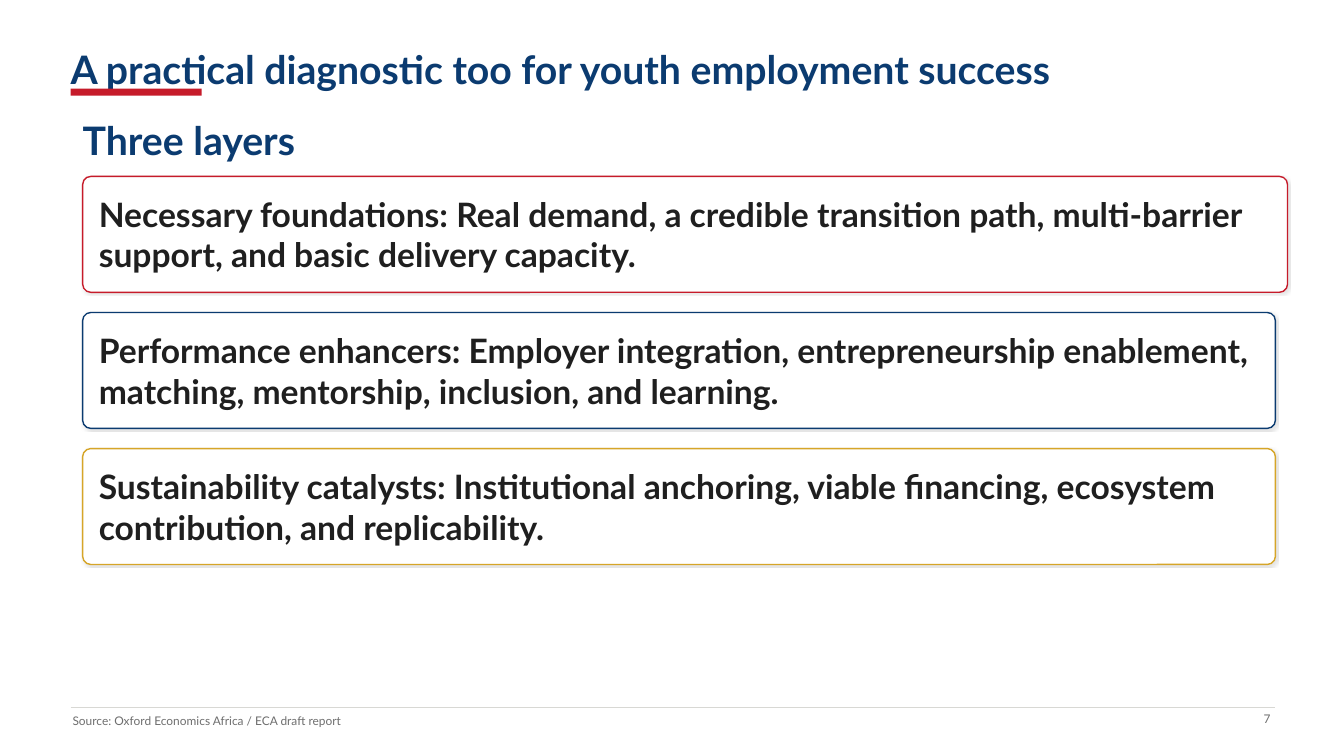
from pptx import Presentation
from pptx.dml.color import RGBColor
from pptx.enum.shapes import MSO_CONNECTOR, MSO_SHAPE
from pptx.enum.text import MSO_ANCHOR, PP_ALIGN
from pptx.oxml import parse_xml
from pptx.oxml.ns import nsdecls, qn
from pptx.util import Pt

EMU_PER_PX = 9144
RECTANGLE = MSO_SHAPE.RECTANGLE
ROUNDED = MSO_SHAPE.ROUNDED_RECTANGLE
STRAIGHT = MSO_CONNECTOR.STRAIGHT
MIDDLE = MSO_ANCHOR.MIDDLE
LEFT = PP_ALIGN.LEFT
RIGHT = PP_ALIGN.RIGHT

COLOURS = {
    "navy": "0B3B70",
    "red": "C61B2A",
    "gold": "D6A528",
    "ink": "1F1F1F",
    "grey": "6E6E6E",
    "rule": "D8D8D4",
    "white": "FFFFFF",
}

STYLES = {
    "heading": {"size": 28, "bold": True, "colour": "navy"},
    "layer": {"size": 24, "bold": True, "colour": "ink"},
    "footer": {"size": 8.5, "bold": False, "colour": "grey"},
}

LAYERS = [
    ("red", 1195, 1162,
     "Necessary foundations: Real demand, a credible transition path, "
     "multi-barrier support, and basic delivery capacity."),
    ("navy", 1183, 1142,
     "Performance enhancers: Employer integration, entrepreneurship enablement, "
     "matching, mentorship, inclusion, and learning."),
    ("gold", 1183, 1162,
     "Sustainability catalysts: Institutional anchoring, viable financing, "
     "ecosystem contribution, and replicability."),
]


def px(*lengths):
    return [length * EMU_PER_PX for length in lengths]


def colour(name):
    return RGBColor.from_string(COLOURS[name])


class SlideBuilder:
    def __init__(self, page, font_name):
        self.page = page
        self.font_name = font_name

    def text(self, left, top, width, height, words, style, align=LEFT):
        box = self.page.shapes.add_textbox(*px(left, top, width, height))
        frame = box.text_frame
        frame_format = {
            "word_wrap": True,
            "vertical_anchor": MIDDLE,
            "margin_left": 0,
            "margin_top": 0,
            "margin_right": 0,
            "margin_bottom": 0,
        }
        for name, value in frame_format.items():
            setattr(frame, name, value)
        para = frame.paragraphs[0]
        para.alignment = align
        span = para.add_run()
        span.text = words
        look = STYLES[style]
        font_format = {
            "name": self.font_name,
            "size": Pt(look["size"]),
            "bold": look["bold"],
        }
        for name, value in font_format.items():
            setattr(span.font, name, value)
        span.font.color.rgb = colour(look["colour"])

    def shape(self, kind, left, top, width, height, fill):
        box = self.page.shapes.add_shape(kind, *px(left, top, width, height))
        box.shadow.inherit = False
        box.fill.solid()
        box.fill.fore_color.rgb = colour(fill)
        box.line.fill.background()
        return box

    def card(self, left, top, width, height, outline):
        box = self.shape(ROUNDED, left, top, width, height, "white")
        box.adjustments[0] = 0.07
        box.line.color.rgb = colour(outline)
        box.line.width = Pt(1)
        effects = box._element.spPr.find(qn("a:effectLst"))
        effects.append(parse_xml(
            f'<a:outerShdw {nsdecls("a")} blurRad="12700" dist="12700" '
            'dir="2700000" algn="ctr" rotWithShape="0">'
            '<a:srgbClr val="000000"><a:alpha val="10000"/></a:srgbClr>'
            '</a:outerShdw>'))

    def rule(self, left, right, top, line_colour):
        line = self.page.shapes.add_connector(
            STRAIGHT, *px(left, top, right, top))
        line.line.color.rgb = colour(line_colour)
        line.line.width = Pt(1)
        line._element.spPr.append(parse_xml(f'<a:effectLst {nsdecls("a")}/>'))


def main():
    deck = Presentation()
    deck.slide_width, deck.slide_height = px(1333, 750)
    page = deck.slides.add_slide(deck.slide_layouts[6])
    builder = SlideBuilder(page, "Lato")

    builder.text(70, 35, 1170, 67,
                 "A practical diagnostic too for youth employment success",
                 "heading")
    builder.shape(RECTANGLE, 70, 88, 130, 7, "red")
    builder.text(82, 135, 432, 7, "Three layers", "heading")

    card_top, card_height, card_pitch = 175, 115, 135
    for index, (outline, card_width, text_width, words) in enumerate(LAYERS):
        top = card_top + index * card_pitch
        builder.card(82, top, card_width, card_height, outline)
        builder.text(98, top + 8, text_width, card_height - 16, words, "layer")

    builder.rule(70, 1265, 702, "rule")
    builder.text(72, 705, 540, 20,
                 "Source: Oxford Economics Africa / ECA draft report", "footer")
    builder.text(1225, 703, 35, 20, "7", "footer", RIGHT)

    deck.save("out.pptx")


if __name__ == "__main__":
    main()
